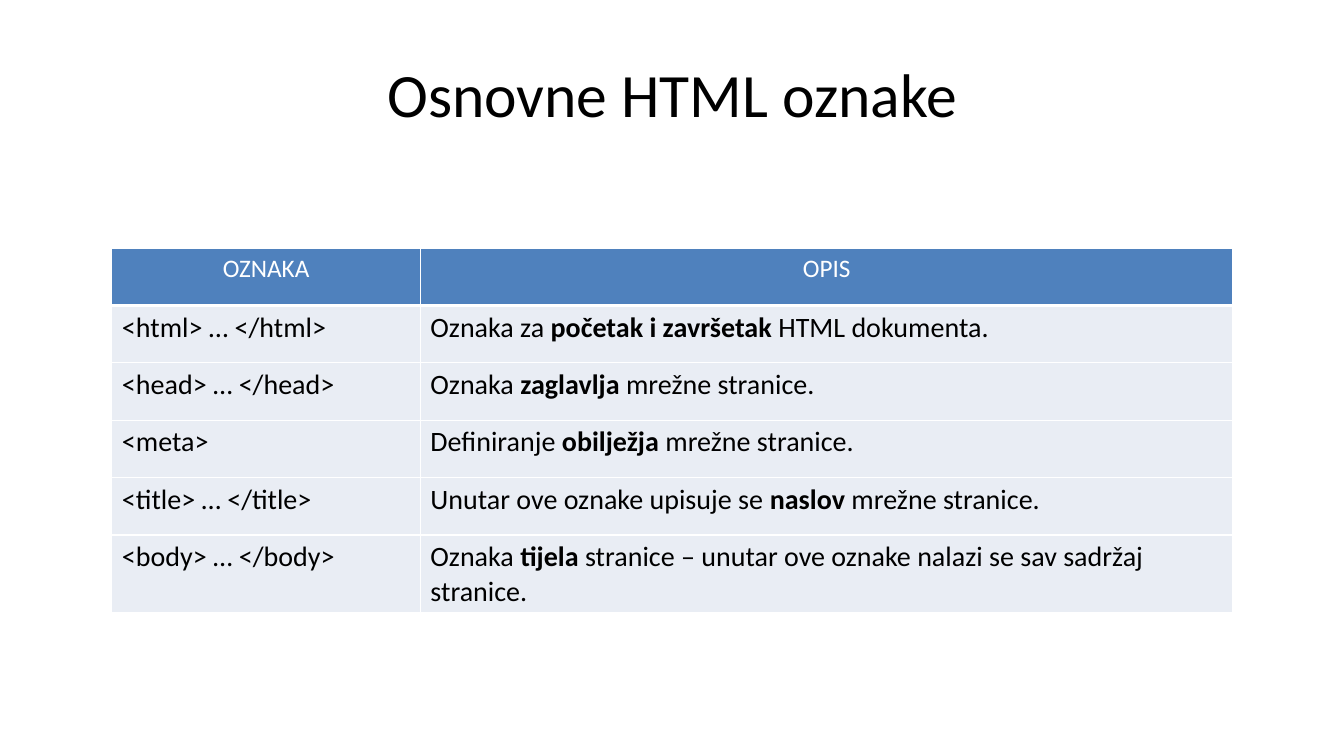
from lxml.etree import SubElement
from pptx import Presentation
from pptx.dml.color import RGBColor
from pptx.enum.text import MSO_ANCHOR, PP_ALIGN
from pptx.oxml.ns import qn
from pptx.util import Inches, Pt

TAGS = [
    ("<html> … </html>", "Oznaka za *početak i završetak *HTML dokumenta."),
    ("<head> … </head>", "Oznaka *zaglavlja* mrežne stranice."),
    ("<meta>", "Definiranje *obilježja* mrežne stranice."),
    ("<title> … </title>", "Unutar ove oznake upisuje se *naslov* mrežne stranice."),
    ("<body> … </body>",
     "Oznaka *tijela* stranice – unutar ove oznake nalazi se sav sadržaj stranice."),
]


def color(value):
    return RGBColor.from_string(value)


class SlideBuilder:
    font = "Calibri"
    ink, paper = "000000", "FFFFFF"
    header_fill, body_fill = "4F81BD", "E9EDF4"

    def __init__(self, slide):
        self.slide = slide

    def add_words(self, paragraph, text, size, ink, align):
        """Fill a paragraph with text in which *asterisks* enclose the bold parts."""
        paragraph.alignment = align
        paragraph.font.name = self.font
        paragraph.font.size = Pt(size)
        paragraph.font.color.rgb = color(ink)
        for index, part in enumerate(text.split("*")):
            run = paragraph.add_run()
            run.text = part
            run.font.bold = index % 2 == 1

    def title(self, text, left, top, width, height):
        heading = self.slide.shapes.add_textbox(
            Inches(left), Inches(top), Inches(width), Inches(height))
        frame = heading.text_frame
        frame.word_wrap = True
        frame.vertical_anchor = MSO_ANCHOR.MIDDLE
        self.add_words(frame.paragraphs[0], text, 44, self.ink, PP_ALIGN.CENTER)

    def borders(self, cell, bottom):
        properties = cell._tc.get_or_add_tcPr()
        for side, width in zip("LRTB", (1, 1, 1, bottom)):
            line = SubElement(properties, qn(f"a:ln{side}"), w=str(Pt(width)))
            fill = SubElement(line, qn("a:solidFill"))
            SubElement(fill, qn("a:srgbClr"), val=self.paper)

    def table(self, rows, left, top, column_widths, row_height):
        grid = self.slide.shapes.add_table(
            len(rows), len(column_widths), Inches(left), Inches(top),
            Inches(sum(column_widths)), Inches(row_height * len(rows))).table
        for column, width in zip(grid.columns, column_widths):
            column.width = Inches(width)
        for row_index, (row, texts) in enumerate(zip(grid.rows, rows)):
            is_header = row_index == 0
            for cell, text in zip(row.cells, texts):
                self.borders(cell, bottom=3 if is_header else 1)
                cell.fill.solid()
                cell.fill.fore_color.rgb = color(
                    self.header_fill if is_header else self.body_fill)
                style = ((18, self.paper, PP_ALIGN.CENTER) if is_header
                         else (20, self.ink, PP_ALIGN.LEFT))
                self.add_words(cell.text_frame.paragraphs[0], text, *style)


def main():
    deck = Presentation()
    deck.slide_width, deck.slide_height = Inches(13.33), Inches(7.5)
    builder = SlideBuilder(deck.slides.add_slide(deck.slide_layouts[6]))

    # Heading
    builder.title("Osnovne HTML oznake", 0.67, 0.3, 12, 1.25)

    # Tags and their descriptions
    builder.table([("OZNAKA", "OPIS"), *TAGS], 1.11, 2.46, (3.06, 8.06), 0.57)

    deck.save("out.pptx")


if __name__ == "__main__":
    main()
